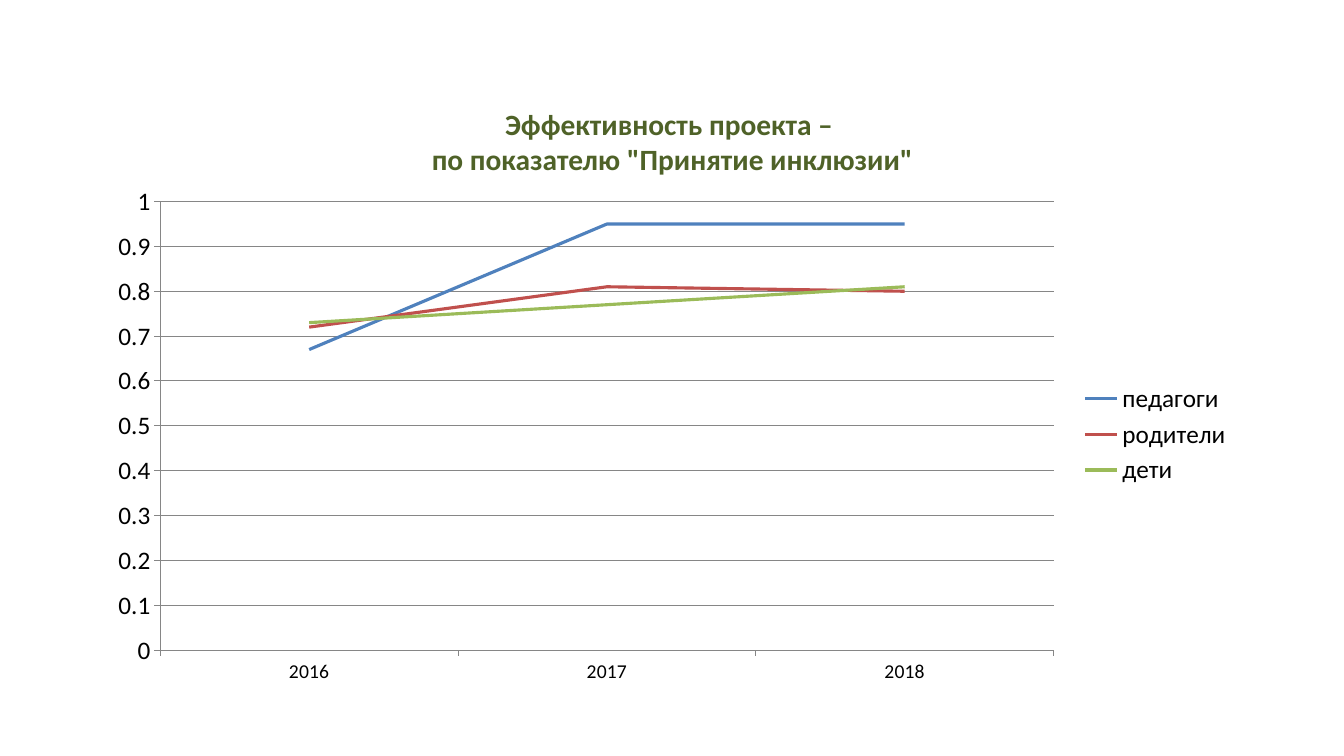
from lxml import etree
from pptx import Presentation
from pptx import util as u
from pptx.chart.data import CategoryChartData
from pptx.dml.color import RGBColor
from pptx.enum import chart as ch, text
from pptx.oxml.ns import qn

BLACK = RGBColor(0x00, 0x00, 0x00)
GREY = RGBColor(0x86, 0x86, 0x86)
DARK_GREEN = RGBColor(0x4F, 0x62, 0x28)
BLUE = RGBColor(0x4F, 0x81, 0xBD)
RED = RGBColor(0xC0, 0x50, 0x4D)
GREEN = RGBColor(0x9B, 0xBB, 0x59)

YEARS = ["2016", "2017", "2018"]
GROUPS = [
    ("педагоги", (0.67, 0.95, 0.95), BLUE),
    ("родители", (0.72, 0.81, 0.8), RED),
    ("дети", (0.73, 0.77, 0.81), GREEN),
]


class SlideBuilder:
    font = "Calibri"

    def __init__(self, prs):
        self.s = prs.slides.add_slide(prs.slide_layouts[5])

    def style(self, font, size, color, bold=False):
        font.name = self.font
        font.size = u.Pt(size)
        font.bold = bold
        font.color.rgb = color

    def title(self, box, lines):
        sp = self.s.shapes.title
        sp.left, sp.top, sp.width, sp.height = map(u.Inches, box)
        tf = sp.text_frame
        tf.word_wrap = True
        tf.auto_size = text.MSO_AUTO_SIZE.SHAPE_TO_FIT_TEXT
        tf.vertical_anchor = text.MSO_ANCHOR.TOP
        tf.margin_left = tf.margin_right = u.Inches(0.13)
        tf.margin_top = tf.margin_bottom = u.Inches(0.07)
        tf.text = "\n".join(lines)
        for p in tf.paragraphs:
            p.alignment = text.PP_ALIGN.CENTER
            p.space_before = u.Pt(0)
            self.style(p.font, 21, DARK_GREEN, bold=True)

    def line_chart(self, box, categories, groups, plot_box):
        data = CategoryChartData()
        data.categories = categories
        for name, values, _ in groups:
            data.add_series(name, values)
        chart = self.s.shapes.add_chart(
            ch.XL_CHART_TYPE.LINE, *map(u.Inches, box), data).chart
        self.style(chart.font, 18, BLACK)
        chart.has_title = False
        chart.has_legend = True
        chart.legend.position = ch.XL_LEGEND_POSITION.RIGHT
        chart.legend.include_in_layout = False
        chart.plots[0].vary_by_categories = False
        for series, (_, _, color) in zip(chart.plots[0].series, groups):
            series.smooth = False
            series.marker.style = ch.XL_MARKER_STYLE.NONE
            self.line(series.format.line, color, 2.25)
        for axis in (chart.category_axis, chart.value_axis):
            axis.major_tick_mark = ch.XL_TICK_MARK.OUTSIDE
            axis.minor_tick_mark = ch.XL_TICK_MARK.NONE
            self.line(axis.format.line, GREY, 0.75)
        self.style(chart.category_axis.tick_labels.font, 14, BLACK)
        axis = chart.value_axis
        axis.minimum_scale, axis.maximum_scale, axis.major_unit = 0, 1, 0.1
        axis.tick_labels.number_format = "General"
        axis.tick_labels.number_format_is_linked = False
        axis.has_major_gridlines = True
        self.line(axis.major_gridlines.format.line, GREY, 0.75)
        self.place_plot(chart, box, plot_box)

    def line(self, line, color, width):
        line.color.rgb = color
        line.width = u.Pt(width)

    def place_plot(self, chart, box, plot_box):
        left, top, width, height = box
        x, y, w, h = plot_box
        area = chart.plots[0]._element.getparent()
        for old in area.findall(qn("c:layout")):
            area.remove(old)
        layout = etree.Element(qn("c:layout"))
        area.insert(0, layout)
        manual = etree.SubElement(layout, qn("c:manualLayout"))
        for tag, val in (
            ("layoutTarget", "inner"), ("xMode", "edge"), ("yMode", "edge"),
            ("x", (x - left) / width), ("y", (y - top) / height),
            ("w", w / width), ("h", h / height),
        ):
            etree.SubElement(manual, qn("c:" + tag)).set("val", str(val))


def main():
    prs = Presentation()
    prs.slide_width, prs.slide_height = u.Inches(13.33), u.Inches(7.5)
    slide = SlideBuilder(prs)
    slide.line_chart((0.95, 1.74, 11.37, 5.14), YEARS, GROUPS,
                     (1.59, 2, 8.86, 4.45))
    slide.title((1.24, 0.98, 10.86, 0.85),
                ["Эффективность проекта – ", 'по показателю "Принятие инклюзии"'])
    prs.save("out.pptx")


if __name__ == "__main__":
    main()
